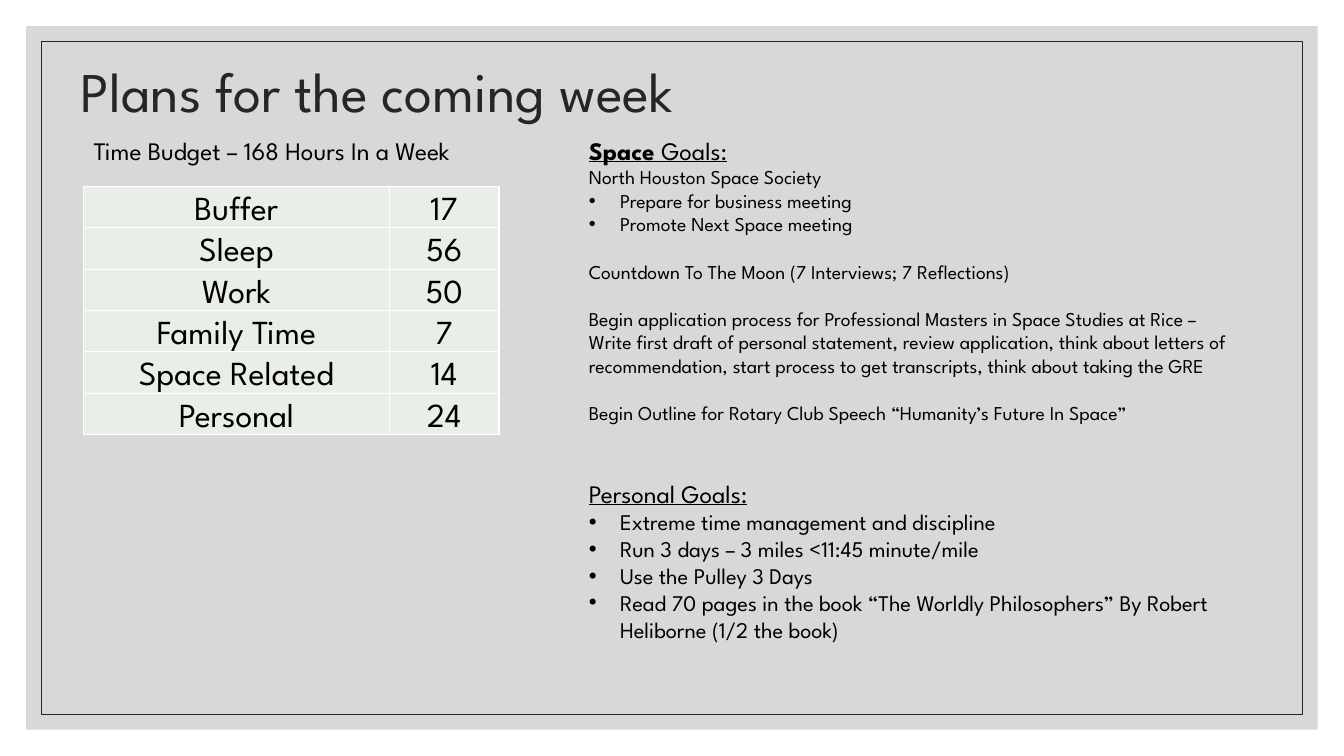
from dataclasses import dataclass

from lxml.etree import SubElement
from pptx import Presentation
from pptx.dml.color import RGBColor
from pptx.enum.shapes import MSO_SHAPE
from pptx.enum.text import MSO_ANCHOR, MSO_AUTO_SIZE, PP_ALIGN
from pptx.oxml.ns import qn
from pptx.shapes.autoshape import Shape
from pptx.slide import Slide
from pptx.table import _Cell
from pptx.text.text import TextFrame, _Paragraph
from pptx.util import Inches, Pt

FONT = "League Spartan"
BLACK = RGBColor(0x00, 0x00, 0x00)
DARK = RGBColor(0x26, 0x26, 0x26)
GREY = RGBColor(0xBF, 0xBF, 0xBF)
MINT = RGBColor(0xEA, 0xEE, 0xE8)


@dataclass(frozen=True)
class Line:
    text: str
    size: int
    bullet: bool = False
    under: bool = False
    before: float = 0
    strong: str = ""


GAP = 16.8
GOALS = [
    Line("Goals:", 18, under=True, strong="Space "),
    Line("North Houston Space Society", 14),
    Line("Prepare for business meeting", 14, bullet=True),
    Line("Promote Next Space meeting", 14, bullet=True),
    Line("Countdown To The Moon (7 Interviews; 7 Reflections)", 14, before=GAP),
    Line("Begin application process for Professional Masters in Space Studies "
         "at Rice – Write first draft of personal statement, review application, "
         "think about letters of recommendation, start process to get transcripts, "
         "think about taking the GRE", 14, before=GAP),
    Line("Begin Outline for Rotary Club Speech “Humanity’s Future In Space”", 14,
         before=GAP),
    Line("Personal Goals:", 18, under=True, before=38.4),
    Line("Extreme time management and discipline", 16, bullet=True),
    Line("Run 3 days – 3 miles <11:45 minute/mile", 16, bullet=True),
    Line("Use the Pulley 3 Days", 16, bullet=True),
    Line("Read 70 pages in the book “The Worldly Philosophers” By Robert "
         "Heliborne (1/2 the book)", 16, bullet=True),
]
HOURS = [("Buffer", 17), ("Sleep", 56), ("Work", 50), ("Family Time", 7),
         ("Space Related", 14), ("Personal", 24)]


def add_run(para: _Paragraph, text: str, size: int, color: RGBColor = BLACK,
            bold: bool = False, under: bool = False) -> None:
    run = para.add_run()
    run.text = text
    font = run.font
    font.name, font.size, font.bold, font.underline = FONT, Pt(size), bold, under
    font.color.rgb = color


def set_bullet(para: _Paragraph, shown: bool) -> None:
    props = para._p.get_or_add_pPr()
    indent = Inches(0.31) if shown else 0
    props.set("marL", str(indent))
    props.set("indent", str(-indent))
    if shown:
        SubElement(props, qn("a:buFont"), typeface="Arial")
        SubElement(props, qn("a:buChar"), char="•")
    else:
        SubElement(props, qn("a:buNone"))


def place(shape: Shape, left: float, top: float, width: float, height: float) -> None:
    shape.left, shape.top = Inches(left), Inches(top)
    shape.width, shape.height = Inches(width), Inches(height)


def add_frame(slide: Slide, inset: float, layer: int) -> Shape:
    """Add a rectangle set in from the slide edges, behind the text."""
    frame = slide.shapes.add_shape(
        MSO_SHAPE.RECTANGLE, Inches(inset), Inches(inset),
        Inches(13.33 - 2 * inset), Inches(7.5 - 2 * inset))
    frame.shadow.inherit = False
    slide.shapes.element.insert(2 + layer, frame._element)
    return frame


def add_frames(slide: Slide) -> None:
    panel = add_frame(slide, 0.26, 0)
    panel.fill.solid()
    panel.fill.fore_color.rgb = GREY
    color = panel._element.spPr.find(".//" + qn("a:srgbClr"))
    SubElement(color, qn("a:alpha"), val="60000")
    panel.line.fill.background()
    border = add_frame(slide, 0.41, 1)
    border.fill.background()
    border.line.color.rgb = DARK
    border.line.width = Pt(0.5)


def add_title(slide: Slide) -> None:
    title = slide.shapes.title
    place(title, 0.7, 0.19, 11, 1.5)
    frame = title.text_frame
    frame.auto_size = MSO_AUTO_SIZE.NONE
    frame.vertical_anchor = MSO_ANCHOR.MIDDLE
    para = frame.paragraphs[0]
    para.alignment = PP_ALIGN.LEFT
    para.line_spacing = 0.9
    add_run(para, "Plans for the coming week", 40, DARK)


def fill_goals(frame: TextFrame) -> None:
    frame.auto_size = MSO_AUTO_SIZE.NONE
    frame.word_wrap = True
    for i, line in enumerate(GOALS):
        para = frame.add_paragraph() if i else frame.paragraphs[0]
        set_bullet(para, line.bullet)
        para.space_before = Pt(line.before)
        if line.strong:
            add_run(para, line.strong, line.size, bold=True, under=line.under)
        add_run(para, line.text, line.size, under=line.under)


def fill_cell(cell: _Cell, text: str) -> None:
    props = cell._tc.get_or_add_tcPr()
    for side in ("lnL", "lnR", "lnT", "lnB"):
        edge = SubElement(props, qn(f"a:{side}"), w=str(Pt(1)))
        SubElement(SubElement(edge, qn("a:solidFill")), qn("a:srgbClr"), val="FFFFFF")
    cell.fill.solid()
    cell.fill.fore_color.rgb = MINT
    cell.margin_left = cell.margin_right = cell.margin_top = Inches(0.01)
    cell.margin_bottom = 0
    cell.vertical_anchor = MSO_ANCHOR.BOTTOM
    para = cell.text_frame.paragraphs[0]
    para.alignment = PP_ALIGN.CENTER
    add_run(para, text, 24)


def add_budget(slide: Slide) -> None:
    label = slide.shapes.add_textbox(Inches(0.83), Inches(1.29), Inches(4.44), Inches(0.4))
    label.text_frame.word_wrap = True
    add_run(label.text_frame.paragraphs[0], "Time Budget – 168 Hours In a Week", 18)
    table = slide.shapes.add_table(
        len(HOURS), 2, Inches(0.83), Inches(1.85), Inches(4.12), Inches(2.45)).table
    table.columns[0].width = Inches(3.03)
    table.columns[1].width = Inches(1.09)
    for row, pair in enumerate(HOURS):
        for col, value in enumerate(pair):
            fill_cell(table.cell(row, col), str(value))


def main() -> None:
    deck = Presentation()
    deck.slide_width, deck.slide_height = Inches(13.33), Inches(7.5)
    slide = deck.slides.add_slide(deck.slide_layouts[1])
    add_frames(slide)
    add_title(slide)
    body = slide.placeholders[1]
    place(body, 5.74, 1.29, 6.67, 5.72)
    fill_goals(body.text_frame)
    add_budget(slide)
    deck.save("out.pptx")


if __name__ == "__main__":
    main()
